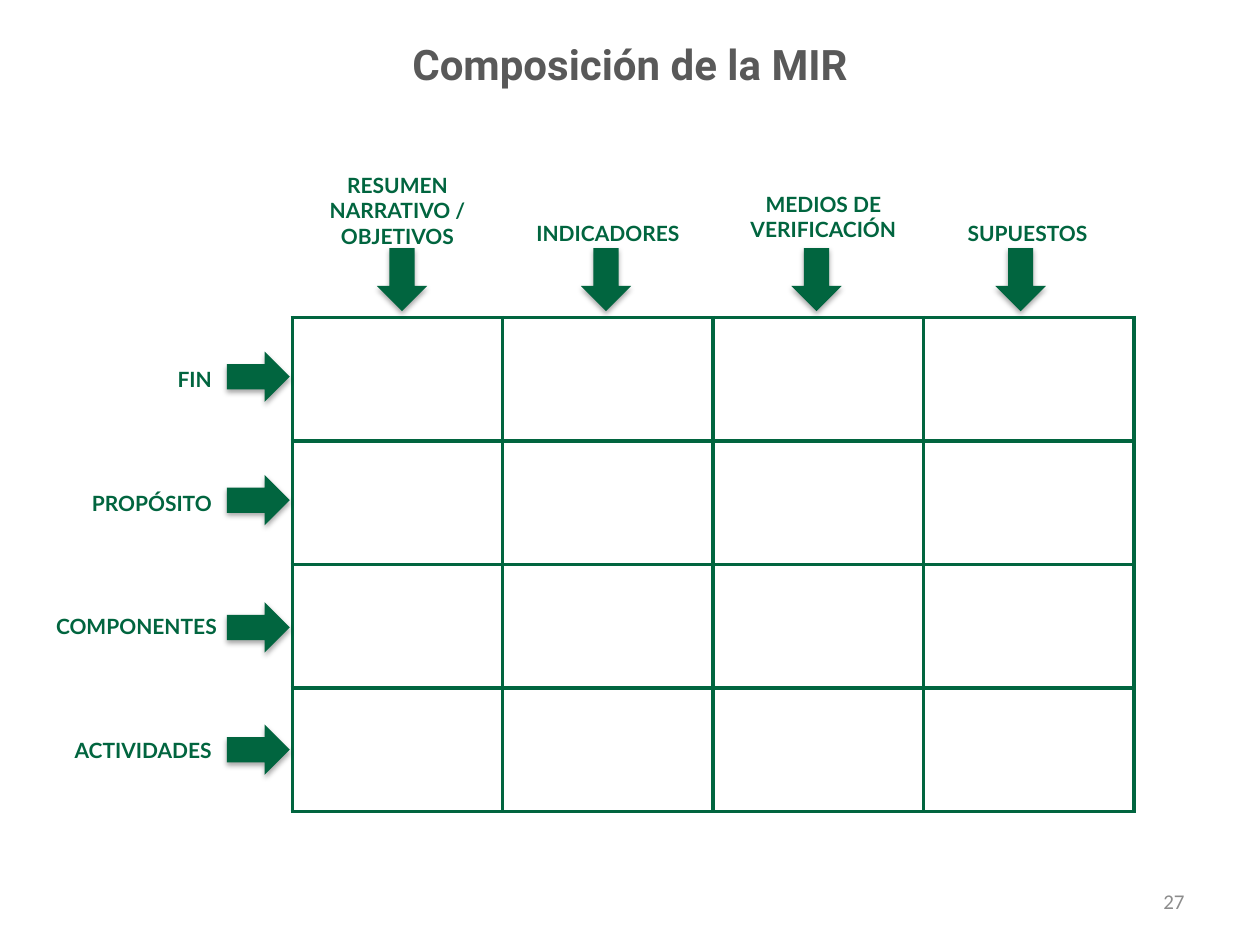
from lxml import etree
from pptx import Presentation
from pptx.dml.color import RGBColor
from pptx.enum.shapes import MSO_SHAPE
from pptx.enum.text import MSO_ANCHOR, PP_ALIGN
from pptx.oxml import parse_xml
from pptx.oxml.ns import nsdecls, qn
from pptx.util import Inches, Pt

ARROW = MSO_SHAPE.RIGHT_ARROW
MIDDLE = MSO_ANCHOR.MIDDLE
CENTER, RIGHT = PP_ALIGN.CENTER, PP_ALIGN.RIGHT

COLORS = {
    "green": "01653F",
    "title": "595959",
    "number": "8C8C8C",
    "white": "FFFFFF",
    "shadow": "000000",
}

TABLE_LEFT, TABLE_TOP = 2.32, 2.52
COLUMN_WIDTH, ROW_HEIGHT = 1.67, 0.98
ARROW_WIDTH, ARROW_HEIGHT = 0.5, 0.4
ROW_ARROW_LEFT, COLUMN_ARROW_TOP = 1.8, 2.02

# Text, right edge of the label, top of the arrow
ROWS = [
    ("FIN", 1.78, 2.79),
    ("PROPÓSITO", 1.78, 3.77),
    ("COMPONENTES", 1.82, 4.78),
    ("ACTIVIDADES", 1.78, 5.75),
]
# Text, left, top and width of the label, left of the arrow
COLUMNS = [
    ("RESUMEN NARRATIVO / OBJETIVOS", 2.32, 1.38, 1.67, 2.94),
    ("INDICADORES", 3.92, 1.56, 1.81, 4.56),
    ("MEDIOS DE VERIFICACIÓN", 5.62, 1.43, 1.83, 6.23),
    ("SUPUESTOS", 7.32, 1.56, 1.67, 7.85),
]


def rgb(name):
    return RGBColor.from_string(COLORS[name])


def add_text(slide, text, left, top, width, height, align=CENTER,
             font="Lato", size=12, color="green", bold=True):
    box = slide.shapes.add_textbox(
        Inches(left), Inches(top), Inches(width), Inches(height))
    frame = box.text_frame
    frame.word_wrap = True
    frame.vertical_anchor = MIDDLE
    paragraph = frame.paragraphs[0]
    paragraph.alignment = align
    run = paragraph.add_run()
    run.text = text
    run.font.name = font
    run.font.size = Pt(size)
    run.font.bold = bold
    run.font.color.rgb = rgb(color)


def add_arrow(slide, left, top, rotation=0):
    """Add a green arrow with a soft shadow below it."""
    shape = slide.shapes.add_shape(
        ARROW, Inches(left), Inches(top), Inches(ARROW_WIDTH), Inches(ARROW_HEIGHT))
    shape.rotation = rotation
    shape.fill.solid()
    shape.fill.fore_color.rgb = rgb("green")
    shape.line.fill.background()
    shape.shadow.inherit = False
    effects = shape._element.spPr.find(qn("a:effectLst"))
    shadow = etree.SubElement(
        effects, qn("a:outerShdw"), blurRad=str(Pt(3.1)), dist=str(Pt(1.8)),
        dir="5400000", rotWithShape="0")
    color = etree.SubElement(shadow, qn("a:srgbClr"), val=COLORS["shadow"])
    etree.SubElement(color, qn("a:alpha"), val="35000")


def set_borders(cell):
    properties = cell._tc.get_or_add_tcPr()
    for index, side in enumerate(("lnL", "lnR", "lnT", "lnB")):
        properties.insert(index, parse_xml(
            f'<a:{side} {nsdecls("a")} w="{Pt(2.25)}"><a:solidFill>'
            f'<a:srgbClr val="{COLORS["green"]}"/></a:solidFill></a:{side}>'))


def add_matrix(slide):
    row_count, column_count = len(ROWS), len(COLUMNS)
    table = slide.shapes.add_table(
        row_count, column_count, Inches(TABLE_LEFT), Inches(TABLE_TOP),
        Inches(COLUMN_WIDTH * column_count), Inches(ROW_HEIGHT * row_count)).table
    table.first_row = False
    table.horz_banding = False
    for cell in table.iter_cells():
        cell.fill.solid()
        cell.fill.fore_color.rgb = rgb("white")
        set_borders(cell)


def add_row_headings(slide):
    for index, (text, right, arrow_top) in enumerate(ROWS):
        add_text(slide, text, 0, TABLE_TOP + index * ROW_HEIGHT,
                 right, ROW_HEIGHT, RIGHT)
        add_arrow(slide, ROW_ARROW_LEFT, arrow_top)


def add_column_headings(slide):
    for text, left, top, width, arrow_left in COLUMNS:
        add_text(slide, text, left, top, width, 0.58)
        add_arrow(slide, arrow_left, COLUMN_ARROW_TOP, rotation=90)


def main():
    presentation = Presentation()
    presentation.slide_width = Inches(10)
    presentation.slide_height = Inches(7.5)
    slide = presentation.slides.add_slide(presentation.slide_layouts[6])
    add_text(slide, "Composición de la MIR", 0.5, 0.09, 9, 0.83,
             font="Roboto", size=24, color="title")
    add_matrix(slide)
    add_row_headings(slide)
    add_column_headings(slide)
    add_text(slide, "27", 7.17, 6.95, 2.33, 0.4, RIGHT,
             font="Calibri", color="number", bold=False)
    presentation.save("out.pptx")


if __name__ == "__main__":
    main()
